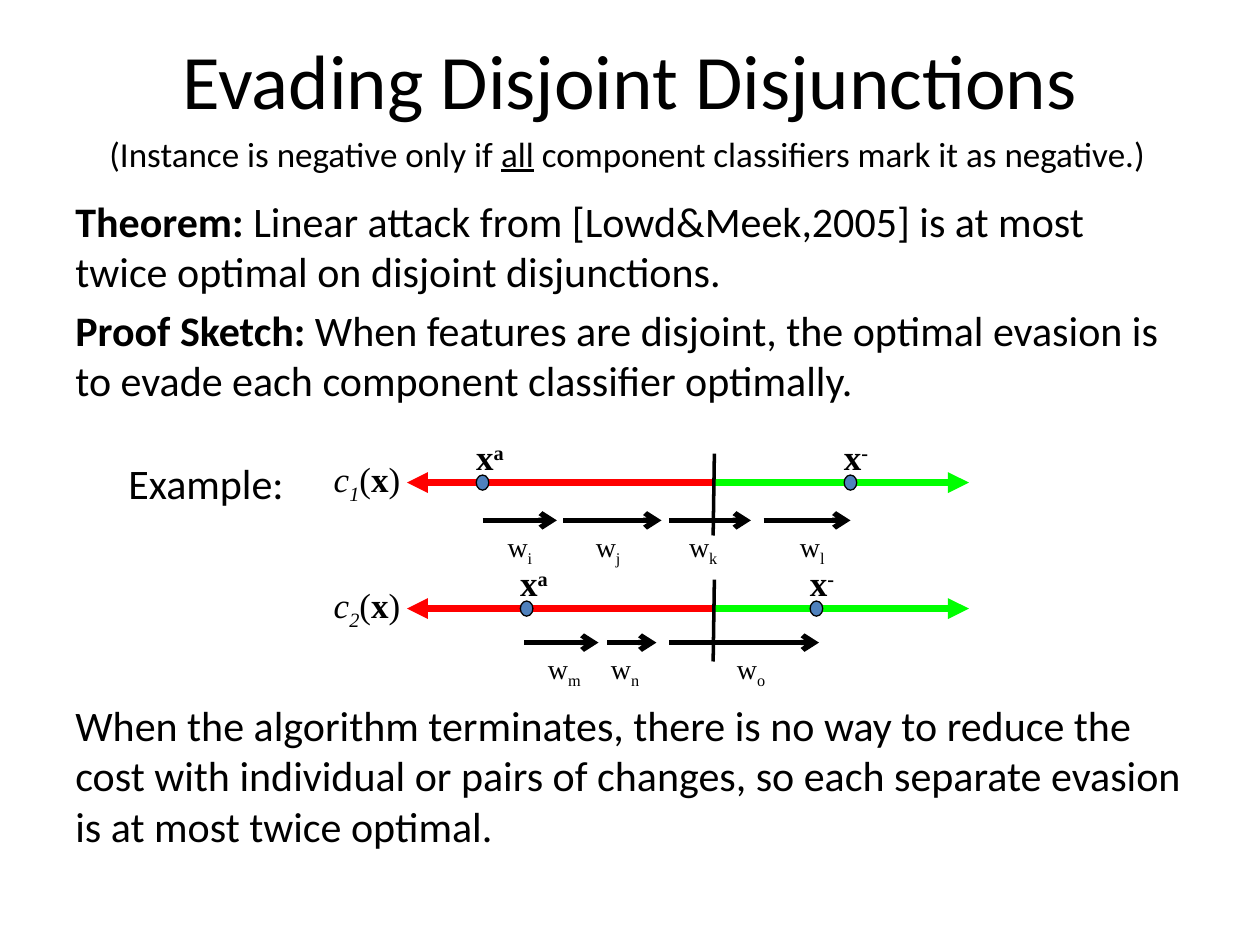
from pptx import Presentation
from pptx.dml.color import RGBColor
from pptx.enum.shapes import MSO_CONNECTOR, MSO_SHAPE
from pptx.enum.text import MSO_ANCHOR, PP_ALIGN
from pptx.oxml.ns import qn
from pptx.util import Inches, Pt
from lxml.etree import SubElement

SANS, SERIF = "Calibri", "Times New Roman"
BLACK, RED, GREEN, BLUE = "000000", "FF0000", "00FF00", "4F81BD"
BOLD, ITALIC, LINED = {"bold": True}, {"italic": True}, {"underline": True}
SUP, SUB = 30000, -25000

TITLE = "Evading Disjoint Disjunctions"
NOTE = [("(Instance is negative only if ",), ("all", LINED),
        (" component classifiers mark it as negative.)",)]
# space before in points, runs
BODY = [
    (4.8, [("Theorem:", BOLD),
           (" Linear attack from [Lowd&Meek,2005] is at most twice optimal "
            "on disjoint disjunctions.",)]),
    (4.8, [("Proof Sketch:", BOLD),
           (" When features are disjoint, the optimal evasion is to evade "
            "each component classifier optimally.",)]),
    (168, [("When the algorithm terminates, there is no way to reduce the "
            "cost with individual or pairs of changes, so each separate "
            "evasion is at most twice optimal.",)]),
]
# steps: subscript, arrow start, arrow end, label left, label width
ROWS = [
    {"name": "1", "y": 3.83, "dots": (3.83, 6.75), "step_y": 4.13, "steps": [
        ("i", 3.83, 4.42, 3.93, 0.46), ("j", 4.47, 5.25, 4.63, 0.45),
        ("k", 5.31, 5.96, 5.37, 0.45), ("l", 6.06, 6.75, 6.25, 0.43)]},
    {"name": "2", "y": 4.83, "dots": (4.18, 6.48), "step_y": 5.1, "steps": [
        ("m", 4.16, 4.75, 4.25, 0.51), ("n", 4.82, 5.21, 4.75, 0.47),
        ("o", 5.31, 6.5, 5.75, 0.45)]},
]
LEFT, MID, RIGHT = 3.23, 5.66, 7.69
DOT_W, DOT_H = 0.1, 0.12


def color(code):
    return RGBColor.from_string(code)


def write(para, runs, size, face):
    """Add runs given as (text, font values, baseline shift)."""
    for text, *rest in runs:
        run = para.add_run()
        run.text = text
        look = {"size": Pt(size), "name": face, **(rest[0] if rest else {})}
        for key, val in look.items():
            setattr(run.font, key, val)
        run.font.color.rgb = color(BLACK)
        if len(rest) > 1:
            run._r.get_or_add_rPr().set("baseline", str(rest[1]))


def label(x, y, w, h, runs, size, face=SERIF):
    box = slide.shapes.add_textbox(Inches(x), Inches(y), Inches(w), Inches(h))
    box.text_frame.word_wrap = False
    write(box.text_frame.paragraphs[0], runs, size, face)


def line(x1, y1, x2, y2, code, width, tip=None):
    link = slide.shapes.add_connector(
        MSO_CONNECTOR.STRAIGHT, *map(Inches, (x1, y1, x2, y2)))
    link.line.color.rgb = color(code)
    link.line.width = Pt(width)
    if tip:
        SubElement(link.line._get_or_add_ln(), qn("a:tailEnd"), type=tip)
    SubElement(link._element.spPr, qn("a:effectLst"))


def point(x, y, mark):
    """Draw a dot on the axis with its x label above."""
    dot = slide.shapes.add_shape(
        MSO_SHAPE.OVAL, Inches(x - DOT_W / 2), Inches(y - DOT_H / 2),
        Inches(DOT_W), Inches(DOT_H))
    dot.shadow.inherit = False
    dot.fill.solid()
    dot.fill.fore_color.rgb = color(BLUE)
    dot.line.color.rgb = color(BLACK)
    dot.line.width = Pt(0.75)
    label(x - 0.15, y - 0.42, 0.46, 0.47,
          [("x", BOLD), (mark, BOLD, SUP)], 20)


def axis(name, y, dots, step_y, steps):
    line(MID, y, RIGHT, y, GREEN, 4, "triangle")
    line(MID, y, LEFT, y, RED, 4, "triangle")
    line(MID + 0.01, y - 0.23, MID, y + 0.42, BLACK, 2)
    for x, mark in zip(dots, "a-"):
        point(x, y, mark)
    for sub, start, end, x, w in steps:
        line(start, step_y, end, step_y, BLACK, 3, "arrow")
        label(x, step_y + 0.02, w, 0.37, [("w",), (sub, {}, SUB)], 16)
    label(2.55, y - 0.25, 0.78, 0.44,
          [("c", ITALIC), (name, ITALIC, SUB), ("(",), ("x", BOLD), (")",)], 20)


deck = Presentation()
deck.slide_width, deck.slide_height = Inches(10), Inches(7.5)
slide = deck.slides.add_slide(deck.slide_layouts[5])

title = slide.shapes.title
place = {"left": 0.5, "top": 0, "width": 9, "height": 1.25}
for key, val in place.items():
    setattr(title, key, Inches(val))
title.text_frame.vertical_anchor = MSO_ANCHOR.MIDDLE
head = title.text_frame.paragraphs[0]
head.alignment = PP_ALIGN.CENTER
write(head, [(TITLE,)], 44, SANS)

body = slide.shapes.add_textbox(
    Inches(0.5), Inches(1.5), Inches(9), Inches(5.75)).text_frame
body.word_wrap = True
for i, (gap, runs) in enumerate(BODY):
    para = body.add_paragraph() if i else body.paragraphs[0]
    para.space_before = Pt(gap)
    write(para, runs, 24, SANS)

label(0.77, 1, 8.46, 0.44, NOTE, 20, SANS)
for row in ROWS:
    axis(**row)
label(0.92, 3.58, 1.45, 0.5, [("Example:",)], 24, SANS)

deck.save("out.pptx")
